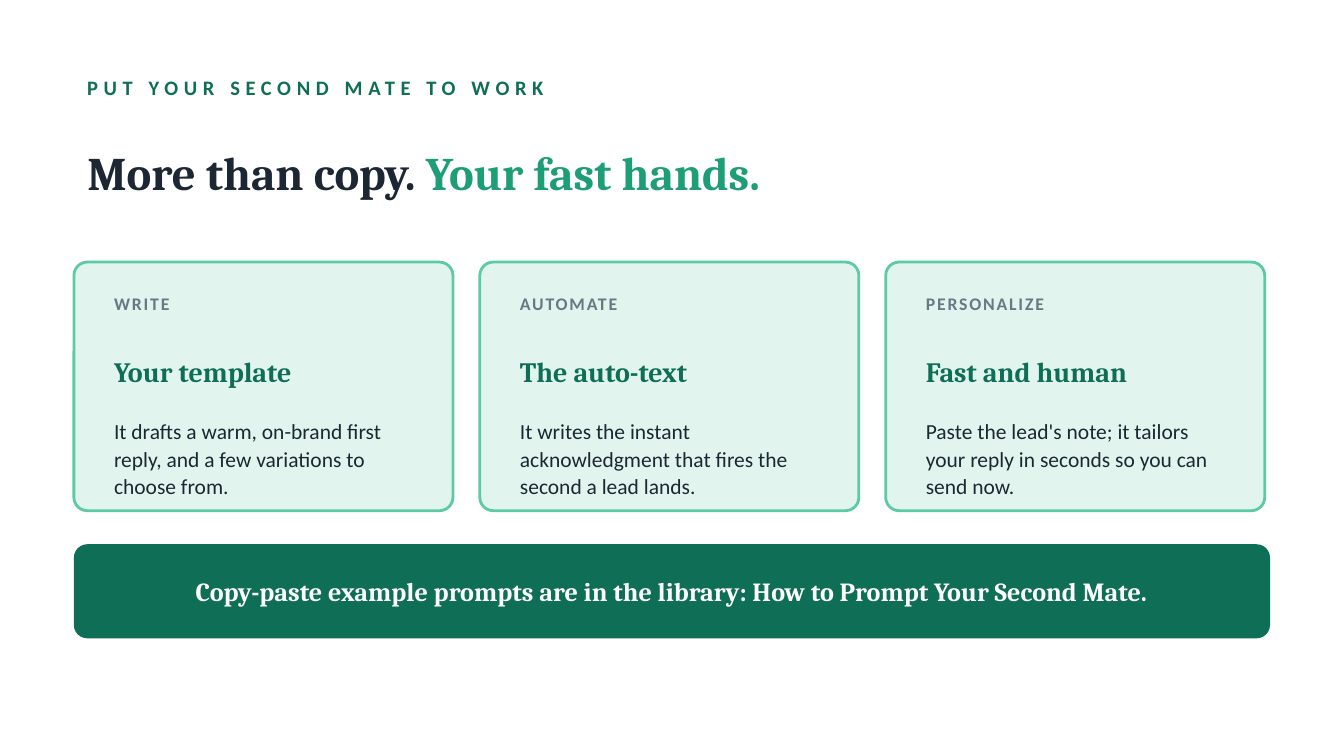
"""Build the slide on putting the second mate to work: three cards and a banner."""
from dataclasses import dataclass

from pptx import Presentation
from pptx.dml.color import RGBColor
from pptx.enum.shapes import MSO_SHAPE
from pptx.enum.text import MSO_ANCHOR, MSO_AUTO_SIZE, PP_ALIGN
from pptx.util import Pt

ROUNDED = MSO_SHAPE.ROUNDED_RECTANGLE
MIDDLE = MSO_ANCHOR.MIDDLE
NO_FIT = MSO_AUTO_SIZE.NONE
LEFT, CENTER = PP_ALIGN.LEFT, PP_ALIGN.CENTER
TITLE_ONLY = 5


@dataclass(frozen=True)
class Style:
    """Describe the type of one kind of text."""
    font: str
    size: float
    color: str
    bold: bool = True
    tracking: float = 0
    leading: float = 1


@dataclass(frozen=True)
class Theme:
    """Hold the colours and type styles of the slide."""
    background: str = "FFFFFF"
    card: str = "E1F5EE"
    border: str = "5DCAA5"
    banner: str = "0F6E56"
    eyebrow: Style = Style("Calibri", 11, "0F6E56", tracking=3)
    title: Style = Style("Cambria", 25, "1C2733")
    accent: Style = Style("Cambria", 25, "1D9E75")
    label: Style = Style("Calibri", 9.5, "6B7785", tracking=1)
    heading: Style = Style("Cambria", 15, "0F6E56")
    body: Style = Style("Calibri", 11.5, "1C2733", bold=False, leading=1.08)
    callout: Style = Style("Cambria", 14, "FFFFFF")


THEME = Theme()
MARGIN, CONTENT_W = 39.6, 640.8
CARD_TOP, CARD_W, CARD_H, CARD_GAP = 140.4, 203.04, 133.2, 14.4
CARD_PAD, CARD_TEXT_W = 14.4, 176.4
CORNER = 7.2

CARDS = [
    ("WRITE", "Your template",
     "It drafts a warm, on-brand first reply, and a few variations to choose from."),
    ("AUTOMATE", "The auto-text",
     "It writes the instant acknowledgment that fires the second a lead lands."),
    ("PERSONALIZE", "Fast and human",
     "Paste the lead's note; it tailors your reply in seconds so you can send now."),
]


def style_run(r, style):
    """Apply a type style to a run."""
    r.font.name = style.font
    r.font.size = Pt(style.size)
    r.font.bold = style.bold
    r.font.color.rgb = RGBColor.from_string(style.color)
    if style.tracking:
        r._r.get_or_add_rPr().set("spc", str(int(style.tracking * 100)))


def write(sp, parts, align=LEFT):
    """Fill a shape with one paragraph of styled (text, style) parts."""
    tf = sp.text_frame
    tf.word_wrap = True
    tf.auto_size = NO_FIT
    tf.vertical_anchor = MIDDLE
    p = tf.paragraphs[0]
    p.alignment = align
    p.line_spacing = parts[0][1].leading
    for text, style in parts:
        r = p.add_run()
        r.text = text
        style_run(r, style)


def add_text(s, box, text, style):
    """Add a text box in one style."""
    sp = s.shapes.add_textbox(*map(Pt, box))
    write(sp, [(text, style)])


def add_title(s, box, parts):
    """Place and fill the title placeholder."""
    sp = s.shapes.title
    sp.left, sp.top, sp.width, sp.height = map(Pt, box)
    write(sp, parts)


def add_panel(s, box, fill, border=None):
    """Add a rounded panel with an optional border."""
    sp = s.shapes.add_shape(ROUNDED, *map(Pt, box))
    sp.shadow.inherit = False
    sp.adjustments[0] = CORNER / box[3]
    sp.fill.solid()
    sp.fill.fore_color.rgb = RGBColor.from_string(fill)
    if border:
        sp.line.color.rgb = RGBColor.from_string(border)
        sp.line.width = Pt(1.5)
    else:
        sp.line.fill.background()
    return sp


def add_card(s, left, label, heading, body):
    """Add a card with its label, heading and body."""
    add_panel(s, (left, CARD_TOP, CARD_W, CARD_H), THEME.card, THEME.border)
    rows = [
        (11.52, 21.6, label, THEME.label),
        (33.12, 50.4, heading, THEME.heading),
        (84.96, 39.6, body, THEME.body),
    ]
    for offset, height, text, style in rows:
        box = (left + CARD_PAD, CARD_TOP + offset, CARD_TEXT_W, height)
        add_text(s, box, text, style)


def add_banner(s, text):
    """Add the full-width banner with centred text."""
    sp = add_panel(s, (MARGIN, 291.6, CONTENT_W, 50.4), THEME.banner)
    write(sp, [(text, THEME.callout)], CENTER)


def main():
    """Build and save the slide."""
    prs = Presentation()
    prs.slide_width, prs.slide_height = Pt(720), Pt(405)
    s = prs.slides.add_slide(prs.slide_layouts[TITLE_ONLY])
    s.background.fill.solid()
    s.background.fill.fore_color.rgb = RGBColor.from_string(THEME.background)

    add_text(s, (MARGIN, 36, CONTENT_W, 21.6),
             "PUT YOUR SECOND MATE TO WORK", THEME.eyebrow)
    add_title(s, (MARGIN, 61.2, CONTENT_W, 61.2),
              [("More than copy. ", THEME.title), ("Your fast hands.", THEME.accent)])
    for i, card in enumerate(CARDS):
        add_card(s, MARGIN + i * (CARD_W + CARD_GAP), *card)
    add_banner(s, "Copy-paste example prompts are in the library: "
                  "How to Prompt Your Second Mate.")
    prs.save("out.pptx")


if __name__ == "__main__":
    main()
